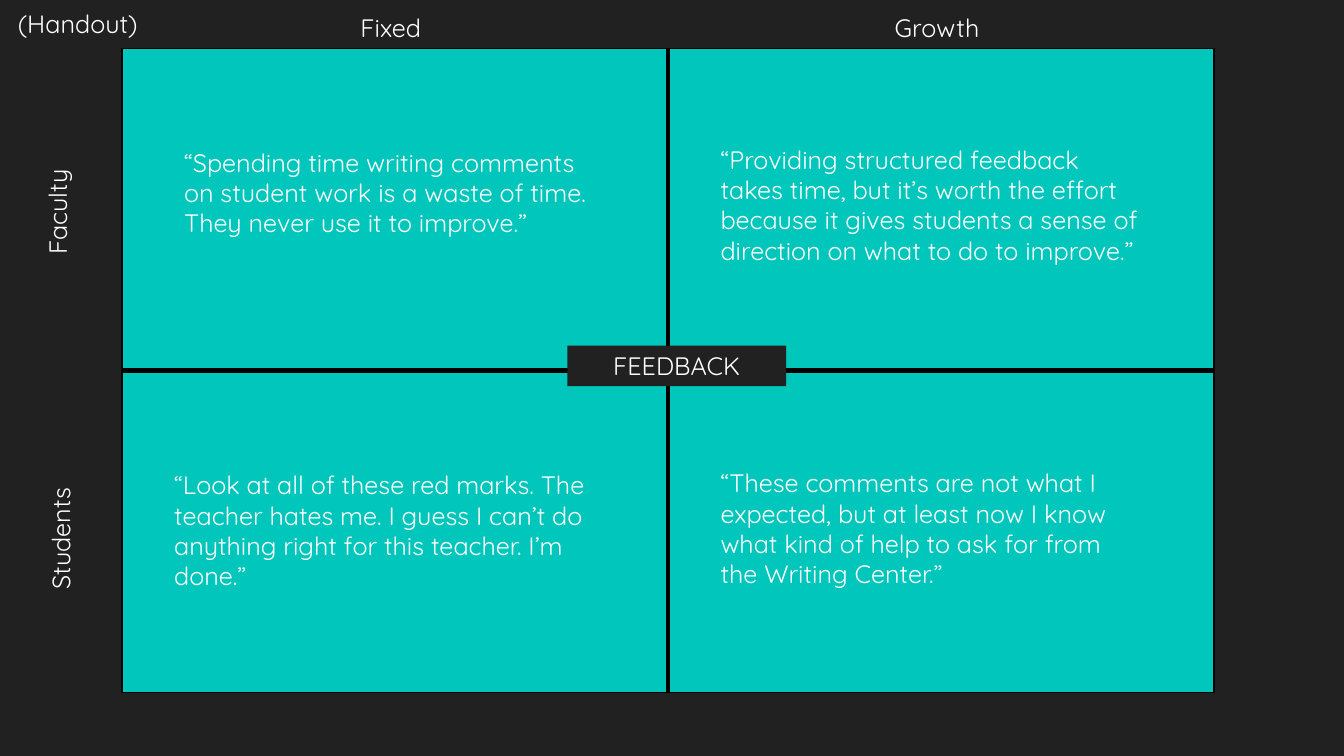
"""Build the feedback mindset matrix: fixed and growth views of faculty and students."""
from typing import NamedTuple

from lxml import etree
from pptx import Presentation
from pptx.dml.color import RGBColor
from pptx.enum.shapes import MSO_CONNECTOR, MSO_SHAPE
from pptx.enum.text import MSO_ANCHOR, MSO_AUTO_SIZE, PP_ALIGN
from pptx.oxml.ns import qn
from pptx.util import Cm, Pt

LEFT, CENTER = PP_ALIGN.LEFT, PP_ALIGN.CENTER
TOP, MIDDLE = MSO_ANCHOR.TOP, MSO_ANCHOR.MIDDLE
FIT_SHAPE = MSO_AUTO_SIZE.SHAPE_TO_FIT_TEXT
RECTANGLE, STRAIGHT = MSO_SHAPE.RECTANGLE, MSO_CONNECTOR.STRAIGHT

COLORS = {"background": "212121", "matrix": "00C6BB", "rule": "000000", "text": "FFFFFF"}
FONT = "Quicksand"
LINE_HEIGHT = 1.02
QUOTE_WIDTH = 11.15


class Box(NamedTuple):
    """Position and size in centimetres."""
    left: float
    top: float
    width: float
    height: float = LINE_HEIGHT


class Label(NamedTuple):
    """A piece of text with its place and orientation."""
    text: str
    box: Box
    align: PP_ALIGN = LEFT
    rotation: int = 0


MATRIX = Box(3.07, 1.22, 27.53, 16.23)
TOPIC = Box(14.3, 8.71, 5.51)

HEADINGS = [
    Label(name, Box(5.72 + column * MATRIX.width / 2, 0.18, 8.26), CENTER)
    for column, name in enumerate(["Fixed", "Growth"])
]
ROW_NAMES = [
    Label("Faculty", Box(-0.97, 4.83, 4.83), CENTER, 270),
    Label("Students", Box(-0.89, 13.06, 4.83), CENTER, 270),
]
QUOTES = [
    Label("“Spending time writing comments on student work is a waste of time. "
          "They never use it to improve.”", Box(4.39, 3.58, QUOTE_WIDTH, 2.57)),
    Label("“Providing structured feedback takes time, but it’s worth the effort "
          "because it gives students a sense of direction on what to do to improve.”",
          Box(17.91, 3.51, QUOTE_WIDTH, 4.11)),
    Label("“Look at all of these red marks. The teacher hates me. I guess I can’t do "
          "anything right for this teacher. I’m done.”",
          Box(4.14, 11.71, QUOTE_WIDTH, 3.33)),
    Label("“These comments are not what I expected, but at least now I know what kind "
          "of help to ask for from the Writing Center.”",
          Box(17.91, 11.66, QUOTE_WIDTH, 3.33)),
]
HANDOUT = Label("(Handout)", Box(0.2, 0.08, 3.96))


def color(name: str) -> RGBColor:
    """Look up a named colour."""
    return RGBColor.from_string(COLORS[name])


def lengths(box: Box) -> list[Cm]:
    """Convert a box to slide lengths."""
    return [Cm(value) for value in box]


def write(shape, text: str, *, align: PP_ALIGN = LEFT, anchor: MSO_ANCHOR = TOP,
          size: float = 18) -> None:
    """Put formatted text into a shape."""
    frame = shape.text_frame
    frame.word_wrap = True
    frame.auto_size = FIT_SHAPE
    frame.vertical_anchor = anchor
    paragraph = frame.paragraphs[0]
    paragraph.alignment = align
    run = paragraph.add_run()
    run.text = text
    run.font.name = FONT
    run.font.size = Pt(size)
    run.font.color.rgb = color("text")


def add_label(slide, label: Label) -> None:
    """Draw a label as a text box."""
    textbox = slide.shapes.add_textbox(*lengths(label.box))
    textbox.rotation = label.rotation
    write(textbox, label.text, align=label.align)


def add_rectangle(slide, box: Box, fill: str):
    """Draw a filled rectangle without outline or shadow."""
    rectangle = slide.shapes.add_shape(RECTANGLE, *lengths(box))
    rectangle.shadow.inherit = False
    rectangle.fill.solid()
    rectangle.fill.fore_color.rgb = color(fill)
    rectangle.line.fill.background()
    return rectangle


def add_divider(slide, matrix, start_side: int, end_side: int) -> None:
    """Join the middles of two opposite sides of the matrix."""
    divider = slide.shapes.add_connector(STRAIGHT, 0, 0, 0, 0)
    divider.begin_connect(matrix, start_side)
    divider.end_connect(matrix, end_side)
    divider.line.color.rgb = color("rule")
    divider.line.width = Pt(3)
    etree.SubElement(divider._element.spPr, qn("a:effectLst"))


def main() -> None:
    """Build and save the slide."""
    presentation = Presentation()
    presentation.slide_width, presentation.slide_height = Cm(33.87), Cm(19.05)
    slide = presentation.slides.add_slide(presentation.slide_layouts[6])
    slide.background.fill.solid()
    slide.background.fill.fore_color.rgb = color("background")

    matrix = add_rectangle(slide, MATRIX, "matrix")
    matrix.line.color.rgb = color("rule")
    matrix.line.width = Pt(1.25)
    for start_side, end_side in [(0, 2), (1, 3)]:
        add_divider(slide, matrix, start_side, end_side)

    topic = add_rectangle(slide, TOPIC, "background")
    write(topic, "FEEDBACK", align=CENTER, anchor=MIDDLE)

    for label in [*HEADINGS, *ROW_NAMES, *QUOTES, HANDOUT]:
        add_label(slide, label)
    presentation.save("out.pptx")


if __name__ == "__main__":
    main()
